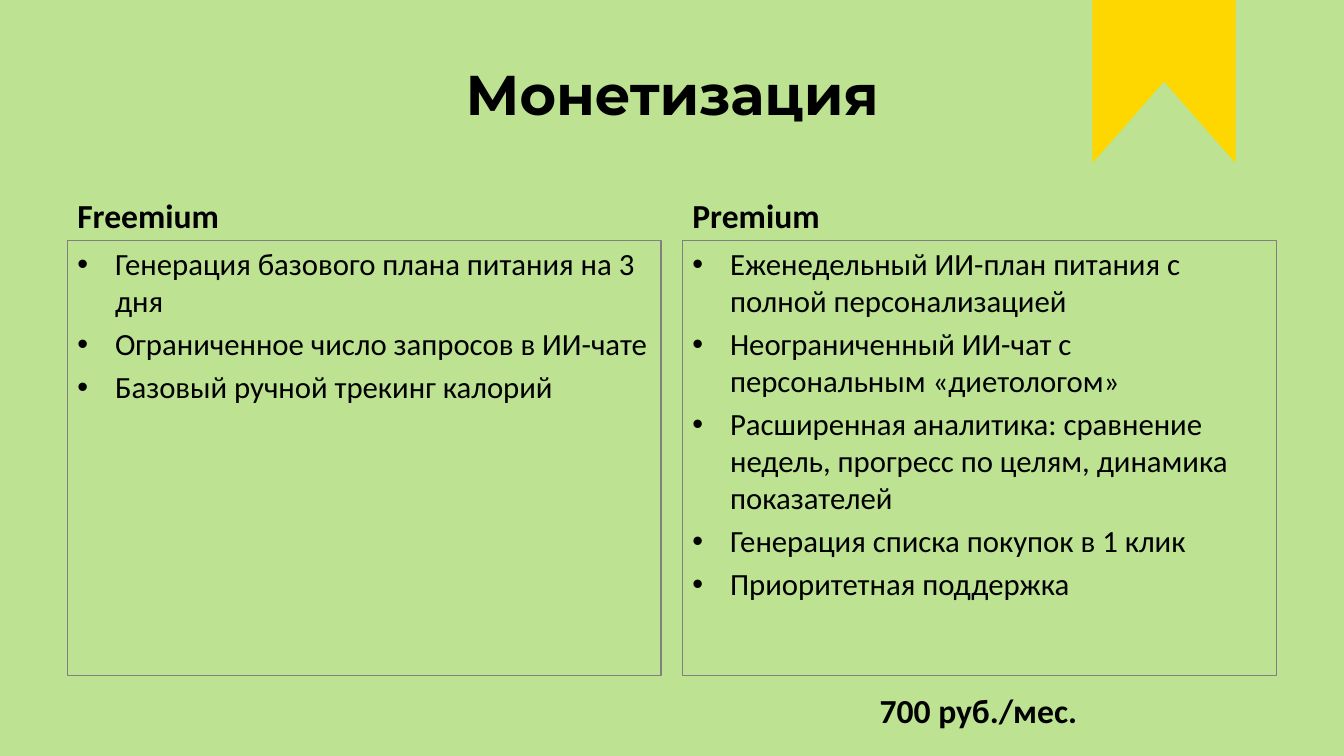
import pptx
import pptx.dml.color
import pptx.enum.shapes
import pptx.enum.text
import pptx.oxml
import pptx.oxml.ns
import pptx.util
from pptx.util import Cm

RGBColor = pptx.dml.color.RGBColor
ANCHOR = pptx.enum.text.MSO_ANCHOR
GREEN = RGBColor(0xBC, 0xE2, 0x92)
GOLD = RGBColor(0xFF, 0xD7, 0x00)
GRAY = RGBColor(0x80, 0x80, 0x80)
BLACK = RGBColor(0, 0, 0)

MARGIN, COLUMN_STEP, COLUMN_WIDTH = Cm(1.7), Cm(15.5), Cm(14.96)
HEAD_TOP, HEAD_HEIGHT = Cm(4.27), Cm(1.78)
LIST_TOP, LIST_HEIGHT = Cm(6.05), Cm(10.97)
BULLET_INDENT = Cm(0.95)

PLANS = [
    ("Freemium", [
        "Генерация базового плана питания на 3 дня",
        "Ограниченное число запросов в ИИ-чате",
        "Базовый ручной трекинг калорий",
    ]),
    ("Premium", [
        "Еженедельный ИИ-план питания с полной персонализацией",
        "Неограниченный ИИ-чат с персональным «диетологом»",
        "Расширенная аналитика: сравнение недель, прогресс по целям, динамика показателей",
        "Генерация списка покупок в 1 клик",
        "Приоритетная поддержка",
    ]),
]


def add_run(p, text, size, bold=False, font="Calibri"):
    r = p.add_run()
    r.text = text
    r.font.name = font
    r.font.size = pptx.util.Pt(size)
    r.font.bold = bold
    r.font.color.rgb = BLACK


def add_title(s, text):
    title = s.shapes.title
    title.left, title.top, title.width, title.height = MARGIN, Cm(0.76), Cm(30.48), Cm(3.18)
    tf = title.text_frame
    tf.auto_size = pptx.enum.text.MSO_AUTO_SIZE.NONE
    tf.vertical_anchor = ANCHOR.MIDDLE
    p = tf.paragraphs[0]
    p.alignment = pptx.enum.text.PP_ALIGN.CENTER
    add_run(p, text, 40, True, "Montserrat")


def add_text_box(s, left, top, width, height, anchor=ANCHOR.TOP):
    sp = s.shapes.add_textbox(left, top, width, height)
    sp.text_frame.word_wrap = True
    sp.text_frame.vertical_anchor = anchor
    return sp


def add_label(s, text, left, top, width, height, anchor=ANCHOR.TOP):
    sp = add_text_box(s, left, top, width, height, anchor)
    add_run(sp.text_frame.paragraphs[0], text, 24, True)


def set_bullet(p):
    pPr = p._p.get_or_add_pPr()
    pPr.set("marL", str(BULLET_INDENT))
    pPr.set("indent", str(-BULLET_INDENT))
    ns = pptx.oxml.ns.nsdecls("a")
    pPr.append(pptx.oxml.parse_xml(f'<a:buFont {ns} typeface="Arial"/>'))
    pPr.append(pptx.oxml.parse_xml(f'<a:buChar {ns} char="•"/>'))


def add_bullet_list(s, items, left):
    sp = add_text_box(s, left, LIST_TOP, COLUMN_WIDTH, LIST_HEIGHT)
    sp.line.color.rgb = GRAY
    sp.line.width = pptx.util.Pt(0.75)
    tf = sp.text_frame
    for i, item in enumerate(items):
        p = tf.add_paragraph() if i else tf.paragraphs[0]
        p.space_before = pptx.util.Pt(4.4 if i else 0)
        set_bullet(p)
        add_run(p, item, 22)


def add_ribbon(s):
    """Two overlapping right triangles leave a notch at the bottom."""
    for apex in (1, 0):
        sp = s.shapes.add_shape(pptx.enum.shapes.MSO_SHAPE.ISOSCELES_TRIANGLE,
                                Cm(27.53), 0, Cm(3.61), Cm(4.11))
        sp.adjustments[0] = apex
        sp.rotation = 180
        sp.shadow.inherit = False
        sp.fill.solid()
        sp.fill.fore_color.rgb = GOLD
        sp.line.fill.background()


def main():
    prs = pptx.Presentation()
    prs.slide_width, prs.slide_height = Cm(33.87), Cm(19.05)
    s = prs.slides.add_slide(prs.slide_layouts[5])
    s.background.fill.solid()
    s.background.fill.fore_color.rgb = GREEN

    add_title(s, "Монетизация")
    for i, (name, items) in enumerate(PLANS):
        left = MARGIN + i * COLUMN_STEP
        add_label(s, name, left, HEAD_TOP, COLUMN_WIDTH, HEAD_HEIGHT, ANCHOR.BOTTOM)
        add_bullet_list(s, items, left)
    add_ribbon(s)
    add_label(s, "700 руб./мес.", Cm(21.92), Cm(17.27), Cm(7.39), Cm(1.27))
    prs.save("out.pptx")


if __name__ == "__main__":
    main()
